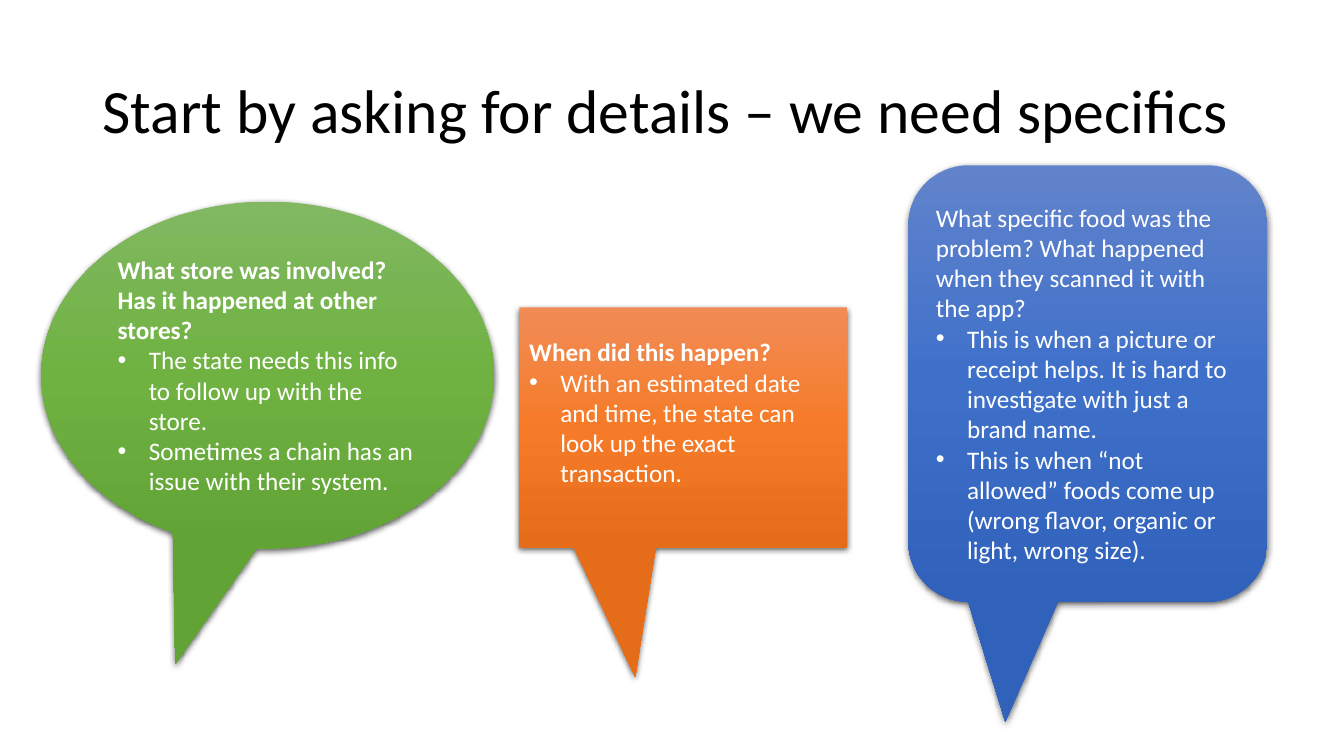
"""Build a slide with three callouts on asking for specific details."""
from copy import deepcopy
from dataclasses import dataclass

from lxml import etree
from pptx import Presentation
from pptx import util as u
from pptx.dml.color import RGBColor
from pptx.enum import shapes, text
from pptx.oxml.ns import qn


@dataclass(frozen=True)
class Theme:
    font: str = "Calibri"
    title_size: int = 44
    body_size: int = 18
    title_color: str = "000000"
    body_color: str = "FFFFFF"
    shadow_color: str = "000000"
    green: tuple[str, ...] = ("81B861", "6FB242", "62A336")
    orange: tuple[str, ...] = ("F18C57", "F67B28", "E56C19")
    blue: tuple[str, ...] = ("6183CB", "3E70CA", "3062BB")


@dataclass(frozen=True)
class Callout:
    kind: shapes.MSO_SHAPE
    box: tuple[float, float, float, float]
    adjustments: tuple[float, ...]
    colors: tuple[str, ...]
    question: str
    bullets: tuple[str, ...]
    bold: bool = True
    bottom_inset: float = 0.05


THEME = Theme()
TITLE = "Start by asking for details – we need specifics"
CALLOUTS = (
    Callout(
        shapes.MSO_SHAPE.OVAL_CALLOUT, (0.41, 2, 4.49, 3.44),
        (-0.204, 0.834), THEME.green,
        "What store was involved? Has it happened at other stores?",
        ("The state needs this info to follow up with the store.",
         "Sometimes a chain has an issue with their system."),
    ),
    Callout(
        shapes.MSO_SHAPE.RECTANGULAR_CALLOUT, (5.15, 3.05, 3.25, 2.38),
        (-0.146, 1.04), THEME.orange,
        "When did this happen?",
        ("With an estimated date and time, the state can look up the exact transaction.",),
        bottom_inset=0.35,
    ),
    Callout(
        shapes.MSO_SHAPE.ROUNDED_RECTANGULAR_CALLOUT, (9.01, 1.64, 3.56, 4.33),
        (-0.23, 0.775, 0.167), THEME.blue,
        "What specific food was the problem? What happened when they scanned it with the app?",
        ("This is when a picture or receipt helps. It is hard to investigate with just a brand name.",
         "This is when “not allowed” foods come up (wrong flavor, organic or light, wrong size)."),
        bold=False,
    ),
)


def style_paragraph(p, size: int, color: str, bold: bool = False) -> None:
    p.alignment = text.PP_ALIGN.LEFT
    p.font.name = THEME.font
    p.font.size = u.Pt(size)
    p.font.bold = bold
    p.font.color.rgb = RGBColor.from_string(color)


def add_bullet(p) -> None:
    props = p._p.get_or_add_pPr()
    indent = u.Inches(0.31)
    props.set("marL", str(indent))
    props.set("indent", str(-indent))
    etree.SubElement(props, qn("a:buFont"), typeface="Arial")
    etree.SubElement(props, qn("a:buChar"), char="•")


def fill_gradient(sp, colors: tuple[str, ...]) -> None:
    sp.fill.gradient()
    sp.fill.gradient_angle = 270
    stop_list = sp._element.spPr.find(".//" + qn("a:gsLst"))
    stop_list.append(deepcopy(stop_list[-1]))
    for i, (stop, color) in enumerate(zip(sp.fill.gradient_stops, colors)):
        stop.position = i / (len(colors) - 1)
        stop.color.rgb = RGBColor.from_string(color)


def add_shadow(sp) -> None:
    sp.shadow.inherit = False
    effects = sp._element.spPr.find(qn("a:effectLst"))
    shadow = etree.SubElement(
        effects, qn("a:outerShdw"), blurRad=str(u.Pt(4.5)),
        dist=str(u.Pt(1.5)), dir="5400000", algn="ctr", rotWithShape="0",
    )
    color = etree.SubElement(shadow, qn("a:srgbClr"), val=THEME.shadow_color)
    etree.SubElement(color, qn("a:alpha"), val="63000")


def add_title(slide) -> None:
    box = slide.shapes.add_textbox(*map(u.Inches, (0.92, 0.4, 11.5, 1.45)))
    tf = box.text_frame
    tf.word_wrap = True
    tf.vertical_anchor = text.MSO_ANCHOR.MIDDLE
    p = tf.paragraphs[0]
    p.text = TITLE
    p.line_spacing = 0.9
    style_paragraph(p, THEME.title_size, THEME.title_color)


def add_callout(slide, callout: Callout) -> None:
    sp = slide.shapes.add_shape(callout.kind, *map(u.Inches, callout.box))
    for i, value in enumerate(callout.adjustments):
        sp.adjustments[i] = value
    fill_gradient(sp, callout.colors)
    sp.line.fill.background()
    add_shadow(sp)
    tf = sp.text_frame
    tf.word_wrap = True
    tf.vertical_anchor = text.MSO_ANCHOR.MIDDLE
    tf.margin_bottom = u.Inches(callout.bottom_inset)
    p = tf.paragraphs[0]
    p.text = callout.question
    style_paragraph(p, THEME.body_size, THEME.body_color, callout.bold)
    for bullet in callout.bullets:
        p = tf.add_paragraph()
        p.text = bullet
        add_bullet(p)
        style_paragraph(p, THEME.body_size, THEME.body_color)


def main() -> None:
    prs = Presentation()
    prs.slide_width, prs.slide_height = u.Inches(13.33), u.Inches(7.5)
    slide = prs.slides.add_slide(prs.slide_layouts[6])
    add_title(slide)
    for callout in CALLOUTS:
        add_callout(slide, callout)
    prs.save("out.pptx")


if __name__ == "__main__":
    main()
